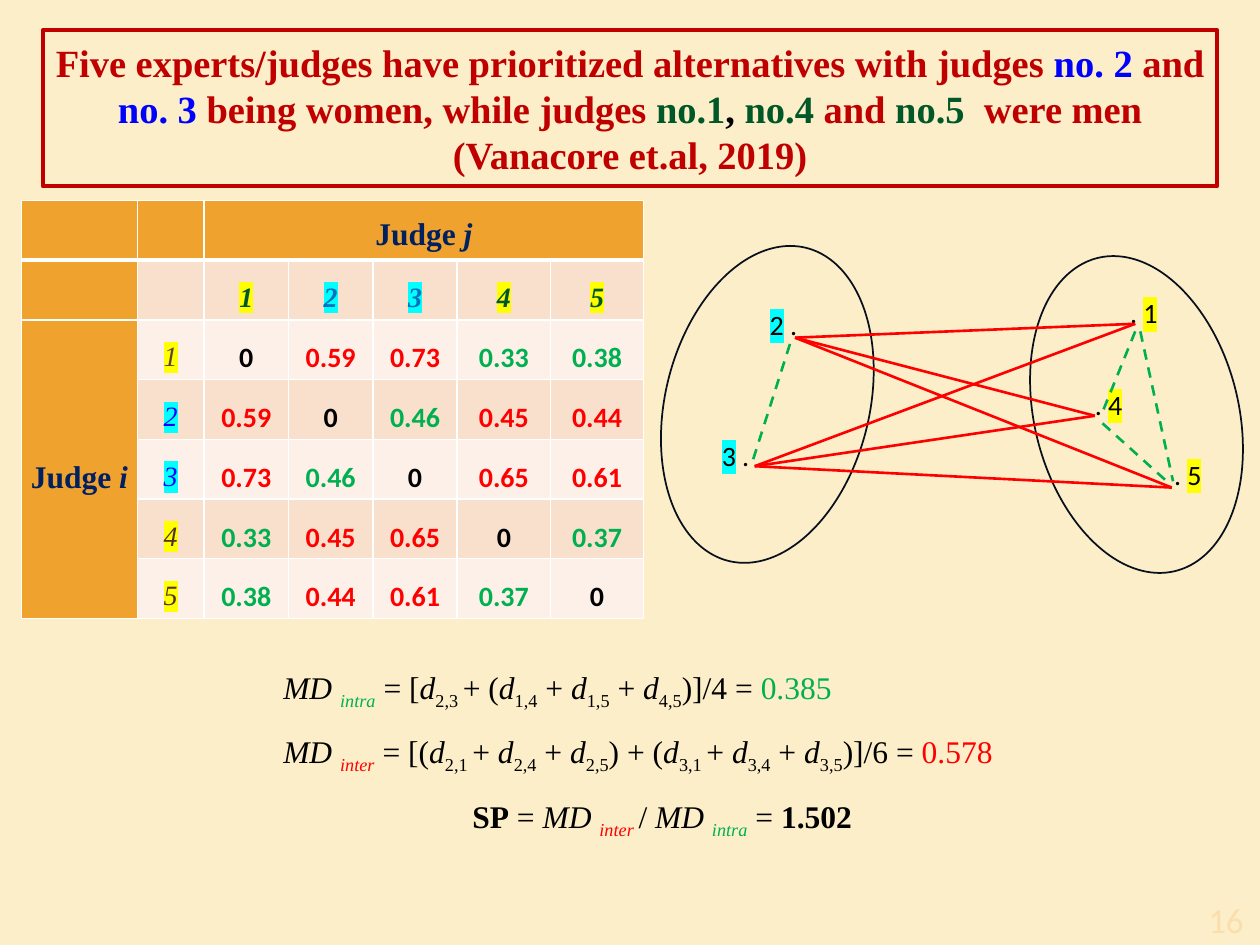
"""Build the slide on judge distances within and between gender groups."""
import itertools

import lxml.etree
import pptx
import pptx.dml.color
import pptx.enum.dml
import pptx.enum.shapes
import pptx.enum.text
import pptx.oxml.ns
import pptx.util

Inches = pptx.util.Inches
Pt = pptx.util.Pt
RGBColor = pptx.dml.color.RGBColor
qn = pptx.oxml.ns.qn
ALIGN = pptx.enum.text.PP_ALIGN
ANCHOR = pptx.enum.text.MSO_ANCHOR
SHAPE = pptx.enum.shapes.MSO_SHAPE

CREAM = RGBColor(0xFB, 0xEE, 0xC9)
CRIMSON = RGBColor(0xC0, 0x00, 0x00)
BLUE = RGBColor(0x00, 0x00, 0xFF)
SKY = RGBColor(0x00, 0x70, 0xC0)
NAVY = RGBColor(0x00, 0x20, 0x60)
INK = RGBColor(0x09, 0x10, 0x1D)
FOREST = RGBColor(0x00, 0x58, 0x28)
GREEN = RGBColor(0x00, 0xB0, 0x50)
RED = RGBColor(0xFF, 0x00, 0x00)
BLACK = RGBColor(0x00, 0x00, 0x00)
WHITE = RGBColor(0xFF, 0xFF, 0xFF)
BROWN = RGBColor(0x52, 0x32, 0x27)
LIGHT_BROWN = RGBColor(0x62, 0x41, 0x39)
YELLOW = RGBColor(0xFF, 0xFF, 0x00)
CYAN = RGBColor(0x00, 0xFF, 0xFF)
ORANGE = RGBColor(0xF0, 0xA2, 0x2E)
PEACH = RGBColor(0xF9, 0xE0, 0xCD)
PALE_PEACH = RGBColor(0xFC, 0xF0, 0xE8)
SAND = RGBColor(0xFB, 0xDF, 0xAB)
SERIF = "Times New Roman"
SANS = "Calibri"


def write(para, text, size=18, font=SERIF, color=BLACK, bold=False, italic=False,
          highlight=None, subscript=False):
    span = para.add_run()
    span.text = text
    span.font.size = Pt(size)
    span.font.bold = bold
    span.font.italic = italic
    span.font.color.rgb = color
    properties = span.font._element
    if highlight is not None:
        mark = lxml.etree.SubElement(properties, qn("a:highlight"))
        lxml.etree.SubElement(mark, qn("a:srgbClr"), val=str(highlight))
    span.font.name = font
    if subscript:
        properties.set("baseline", "-25000")


def connect(start, end, color, dashed=False):
    line = page.shapes.add_connector(
        pptx.enum.shapes.MSO_CONNECTOR.STRAIGHT, *map(Inches, start + end))
    line.line.color.rgb = color
    line.line.width = Pt(1.5)
    if dashed:
        line.line.dash_style = pptx.enum.dml.MSO_LINE.DASH
    lxml.etree.SubElement(line._element.spPr, qn("a:effectLst"))


deck = pptx.Presentation()
deck.slide_width = Inches(10)
deck.slide_height = Inches(7.5)
page = deck.slides.add_slide(deck.slide_layouts[6])
page.background.fill.solid()
page.background.fill.fore_color.rgb = CREAM

title = page.shapes.add_shape(
    SHAPE.RECTANGLE, Inches(0.34), Inches(0.24), Inches(9.32), Inches(1.24))
title.shadow.inherit = False
title.fill.background()
title.line.color.rgb = CRIMSON
title.line.width = Pt(2.25)
title.text_frame.vertical_anchor = ANCHOR.MIDDLE
title.text_frame.word_wrap = True
para = title.text_frame.paragraphs[0]
para.alignment = ALIGN.CENTER
for text, color in [
    ("Five experts/judges have prioritized alternatives with judges ", CRIMSON),
    ("no. 2 ", BLUE), ("and ", CRIMSON), ("no. 3 ", BLUE),
    ("being women, while judges ", CRIMSON), ("no.1", FOREST), (", ", BLACK),
    ("no.4 ", FOREST), ("and ", CRIMSON), ("no.5  ", FOREST),
    ("were men (Vanacore et.al, 2019)", CRIMSON),
]:
    write(para, text, size=22, color=color, bold=True)

women = {2, 3}
distances = [
    ["0", "0.59", "0.73", "0.33", "0.38"],
    ["0.59", "0", "0.46", "0.45", "0.44"],
    ["0.73", "0.46", "0", "0.65", "0.61"],
    ["0.33", "0.45", "0.65", "0", "0.37"],
    ["0.38", "0.44", "0.61", "0.37", "0"],
]
contents = {
    (0, 2): [("Judge ", dict(color=NAVY, bold=True)),
             ("j", dict(color=NAVY, bold=True, italic=True))],
    (2, 0): [("Judge ", dict(color=NAVY, bold=True)),
             ("i", dict(color=NAVY, bold=True, italic=True))],
}
for judge in range(1, 6):
    is_woman = judge in women
    marker = CYAN if is_woman else YELLOW
    man_color = LIGHT_BROWN if judge == 1 else BROWN
    contents[1, judge + 1] = [(str(judge), dict(
        size=16, color=SKY if is_woman else FOREST, bold=True, italic=True, highlight=marker))]
    contents[judge + 1, 1] = [(str(judge), dict(
        size=16, color=BLUE if is_woman else man_color, italic=True, highlight=marker))]
    for other, value in enumerate(distances[judge - 1], 1):
        pair_color = GREEN if is_woman == (other in women) else RED
        contents[judge + 1, other + 1] = [(value, dict(
            size=16, font=SANS, color=BLACK if judge == other else pair_color, bold=True))]

table = page.shapes.add_table(
    7, 7, Inches(0.17), Inches(1.59), Inches(4.92), Inches(3.32)).table
for column, width in zip(table.columns, [0.92, 0.53, 0.67, 0.67, 0.67, 0.74, 0.74]):
    column.width = Inches(width)
table.cell(0, 2).merge(table.cell(0, 6))
table.cell(2, 0).merge(table.cell(6, 0))
for row, column in itertools.product(range(7), range(7)):
    cell = table.cell(row, column)
    cell.fill.solid()
    band = PEACH if row % 2 else PALE_PEACH
    cell.fill.fore_color.rgb = ORANGE if row == 0 or column == 0 else band
    widths = {"L": 1, "R": 1, "T": 3 if row == 1 else 1, "B": 3 if row == 0 else 1}
    properties = cell._tc.get_or_add_tcPr()
    for index, (side, width) in enumerate(widths.items()):
        border = lxml.etree.Element(qn("a:ln" + side), w=str(Pt(width)))
        paint = lxml.etree.SubElement(border, qn("a:solidFill"))
        lxml.etree.SubElement(paint, qn("a:srgbClr"), val=str(WHITE))
        properties.insert(index, border)
    if (row, column) in contents:
        cell.margin_left = cell.margin_right = Inches(0.07)
        cell.margin_top = cell.margin_bottom = 0
        cell.vertical_anchor = ANCHOR.MIDDLE if row else ANCHOR.TOP
        para = cell.text_frame.paragraphs[0]
        para.alignment = ALIGN.CENTER
        para.line_spacing = 1.5
        for text, style in contents[row, column]:
            write(para, text, **style)

connect((6.27, 2.73), (5.97, 3.67), GREEN, dashed=True)
for left, top, angle in [(5.28, 1.93, 13.9), (8.21, 2.01, -14)]:
    group = page.shapes.add_shape(
        SHAPE.OVAL, Inches(left), Inches(top), Inches(1.62), Inches(2.56))
    group.rotation = angle
    group.shadow.inherit = False
    group.fill.background()
    group.line.color.rgb = INK
    group.line.width = Pt(1)

for judge, left, top in [(2, 6.01, 2.39), (3, 5.63, 3.43), (1, 8.87, 2.3),
                         (4, 8.59, 3.03), (5, 9.22, 3.58)]:
    box = page.shapes.add_textbox(Inches(left), Inches(top), Inches(0.45), Inches(0.37))
    box.text_frame.word_wrap = True
    para = box.text_frame.paragraphs[0]
    if judge in women:
        write(para, str(judge), size=16, font=SANS, highlight=CYAN)
        write(para, " .", size=16, font=SANS)
    else:
        write(para, ". ", size=16, font=SANS)
        write(para, str(judge), size=16, font=SANS, highlight=YELLOW)

for start, end in [((9.01, 2.63), (8.75, 3.27)), ((9.05, 2.63), (9.31, 3.82)),
                   ((8.75, 3.36), (9.26, 3.82))]:
    connect(start, end, GREEN, dashed=True)
for woman, man in itertools.product([(6.31, 2.68), (5.99, 3.7)],
                                    [(9.01, 2.57), (8.69, 3.3), (9.3, 3.87)]):
    connect(man, woman, RED)

formulas = page.shapes.add_textbox(Inches(1.65), Inches(5.08), Inches(8.35), Inches(1.42))
formulas.text_frame.word_wrap = True
for name, color, terms, ending, result in [
    ("intra", GREEN, [(" = [", "2,3 "), ("+ (", "1,4"), (" + ", "1,5"), (" + ", "4,5")],
     ")]/4 = ", "0.385"),
    ("inter", RED, [(" = [(", "2,1 "), ("+ ", "2,4"), (" + ", "2,5"), (") + (", "3,1 "),
                    ("+ ", "3,4"), (" + ", "3,5")], ")]/6 = ", "0.578"),
]:
    para = formulas.text_frame.paragraphs[-1]
    write(para, "MD ", italic=True)
    write(para, name, color=color, italic=True, subscript=True)
    for operator, pair in terms:
        write(para, operator)
        write(para, "d", italic=True)
        write(para, pair, subscript=True)
    write(para, ending)
    write(para, result, color=color)
    formulas.text_frame.add_paragraph()
para = formulas.text_frame.paragraphs[-1]
write(para, "SP", bold=True)
write(para, " = ")
write(para, "MD ", italic=True)
write(para, "inter ", color=RED, italic=True, subscript=True)
write(para, "/")
write(para, " MD ", italic=True)
write(para, "intra", color=GREEN, italic=True, subscript=True)
write(para, " = ")
write(para, "1.502", bold=True)
for para, indent in zip(formulas.text_frame.paragraphs, [0.5, 0.5, 2]):
    para.line_spacing = 1.5
    para._p.get_or_add_pPr().set("indent", str(Inches(indent)))

number = page.shapes.add_textbox(Inches(9), Inches(7.1), Inches(0.97), Inches(0.4))
number.text_frame.vertical_anchor = ANCHOR.MIDDLE
number.text_frame.word_wrap = True
number.text_frame.paragraphs[0].alignment = ALIGN.RIGHT
write(number.text_frame.paragraphs[0], "16", size=20, font=SANS, color=SAND)

deck.save("out.pptx")
